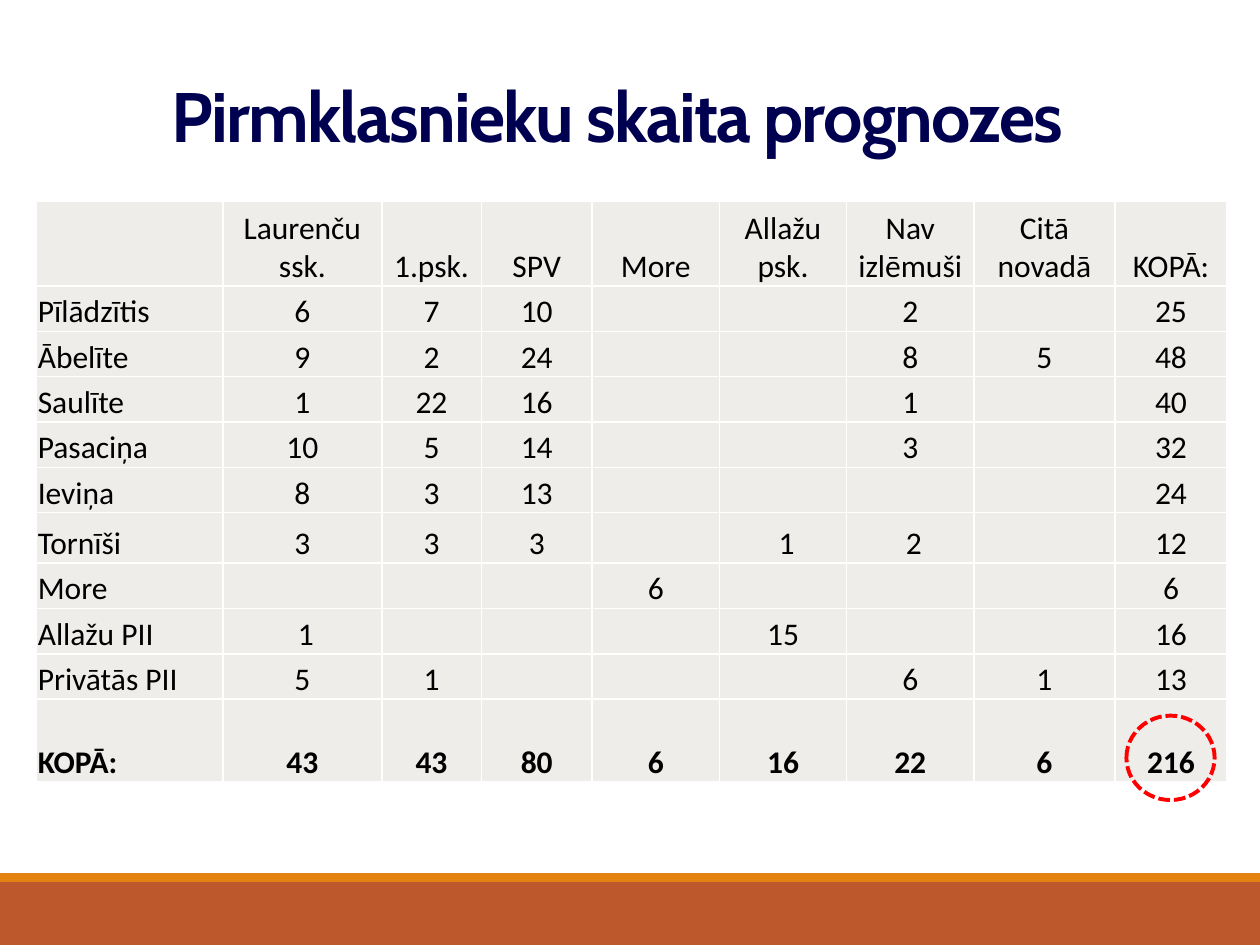
import pptx
import pptx.util
import pptx.dml.color
import pptx.enum.dml
import pptx.enum.shapes
import pptx.enum.text
import pptx.oxml
import pptx.oxml.ns
from pptx.util import Inches

COLORS = {"title": "000050", "text": "000000", "cell": "EFEDEA", "border": "FFFFFF",
          "band": "BD582C", "stripe": "E48312", "mark": "FF0000"}
COLS = [1.48, 1.26, 0.79, 0.88, 1.01, 1.01, 1.01, 1.12, 0.89]
ROWS = [0.67] + [0.36] * 5 + [0.4] + [0.36] * 3 + [0.66]
DATA = [
    ["", "Laurenču ssk.", "1.psk.", "SPV", "More", "Allažu psk.", "Nav izlēmuši", "Citā novadā", "KOPĀ:"],
    ["Pīlādzītis", "6", "7", "10", "", "", "2", "", "25"],
    ["Ābelīte", "9", "2", "24", "", "", "8", "5", "48"],
    ["Saulīte", "1", "22", "16", "", "", "1", "", "40"],
    ["Pasaciņa", "10", "5", "14", "", "", "3", "", "32"],
    ["Ieviņa", "8", "3", "13", "", "", "", "", "24"],
    ["Tornīši", "3", "3", "3", "", " 1", " 2", "", "12"],
    ["More", "", "", "", "6", "", "", "", "6"],
    ["Allažu PII", " 1", "", "", "", "15", "", "", "16"],
    ["Privātās PII", "5", "1", "", "", "", "6", "1", "13"],
    ["KOPĀ:", "43", "43", "80", "6", "16", "22", "6", "216"],
]


def rgb(name):
    """Return the named colour."""
    return pptx.dml.color.RGBColor.from_string(COLORS[name])


def style_run(r, font, size, color, bold=False):
    """Set the font of a run."""
    r.font.name = font
    r.font.size = pptx.util.Pt(size)
    r.font.bold = bold
    r.font.color.rgb = rgb(color)


def add_bar(s, x, y, w, h, color):
    """Draw a plain filled rectangle."""
    sp = s.shapes.add_shape(pptx.enum.shapes.MSO_SHAPE.RECTANGLE,
                            Inches(x), Inches(y), Inches(w), Inches(h))
    sp.shadow.inherit = False
    sp.fill.solid()
    sp.fill.fore_color.rgb = rgb(color)
    sp.line.fill.background()


def add_footer(s, x, y, w, h, stripe=0.07):
    """Draw the footer band with its stripe on top."""
    add_bar(s, x, y + stripe, w, h - stripe, "band")
    add_bar(s, x, y, w, stripe, "stripe")


def add_title(s, x, y, w, h):
    """Place the centred title."""
    tf = s.shapes.add_textbox(Inches(x), Inches(y), Inches(w), Inches(h)).text_frame
    tf.word_wrap = True
    tf.vertical_anchor = pptx.enum.text.MSO_ANCHOR.MIDDLE
    tf.text = "Pirmklasnieku skaita prognozes "
    p = tf.paragraphs[0]
    p.alignment = pptx.enum.text.PP_ALIGN.CENTER
    r = p.runs[0]
    style_run(r, "Cabin", 40, "title", True)
    r.font._element.set("spc", "-100")


def add_borders(cell):
    """Give a cell thin borders on all four sides."""
    tcPr = cell._tc.get_or_add_tcPr()
    for i, side in enumerate(("lnL", "lnR", "lnT", "lnB")):
        tcPr.insert(i, pptx.oxml.parse_xml(
            f'<a:{side} {pptx.oxml.ns.nsdecls("a")} w="12700"><a:solidFill>'
            f'<a:srgbClr val="{COLORS["border"]}"/></a:solidFill></a:{side}>'))


def fill_cell(cell, text, align, bold):
    """Write and format one table cell."""
    cell.margin_left = cell.margin_right = cell.margin_top = Inches(0.01)
    cell.margin_bottom = 0
    cell.vertical_anchor = pptx.enum.text.MSO_ANCHOR.BOTTOM
    cell.fill.solid()
    cell.fill.fore_color.rgb = rgb("cell")
    add_borders(cell)
    if text:
        cell.text_frame.text = text
        p = cell.text_frame.paragraphs[0]
        p.alignment = align
        style_run(p.runs[0], "Calibri", 18, "text", bold)


def add_forecast(s, x, y):
    """Build the forecast table and ring its grand total."""
    w, h = sum(COLS), sum(ROWS)
    table = s.shapes.add_table(len(ROWS), len(COLS), Inches(x), Inches(y),
                               Inches(w), Inches(h)).table
    table.first_row = table.horz_banding = False
    for col, width in zip(table.columns, COLS):
        col.width = Inches(width)
    for row, height in zip(table.rows, ROWS):
        row.height = Inches(height)
    align = pptx.enum.text.PP_ALIGN
    for i, values in enumerate(DATA):
        for j, text in enumerate(values):
            fill_cell(table.cell(i, j), text, align.CENTER if j else align.LEFT,
                      i == len(DATA) - 1)
    sp = s.shapes.add_shape(pptx.enum.shapes.MSO_SHAPE.OVAL, Inches(x + w - 0.8),
                            Inches(y + h - 0.53), Inches(0.7), Inches(0.67))
    sp.shadow.inherit = False
    sp.fill.background()
    sp.line.color.rgb = rgb("mark")
    sp.line.width = pptx.util.Pt(2.25)
    sp.line.dash_style = pptx.enum.dml.MSO_LINE.SQUARE_DOT


def main():
    """Build and save the slide."""
    prs = pptx.Presentation()
    prs.slide_width, prs.slide_height = Inches(10), Inches(7.5)
    s = prs.slides.add_slide(prs.slide_layouts[6])
    add_footer(s, 0, 6.93, 10, 0.57)
    add_title(s, 0.18, 0.21, 9.55, 1.39)
    add_forecast(s, 0.29, 1.6)
    prs.save("out.pptx")


if __name__ == "__main__":
    main()
